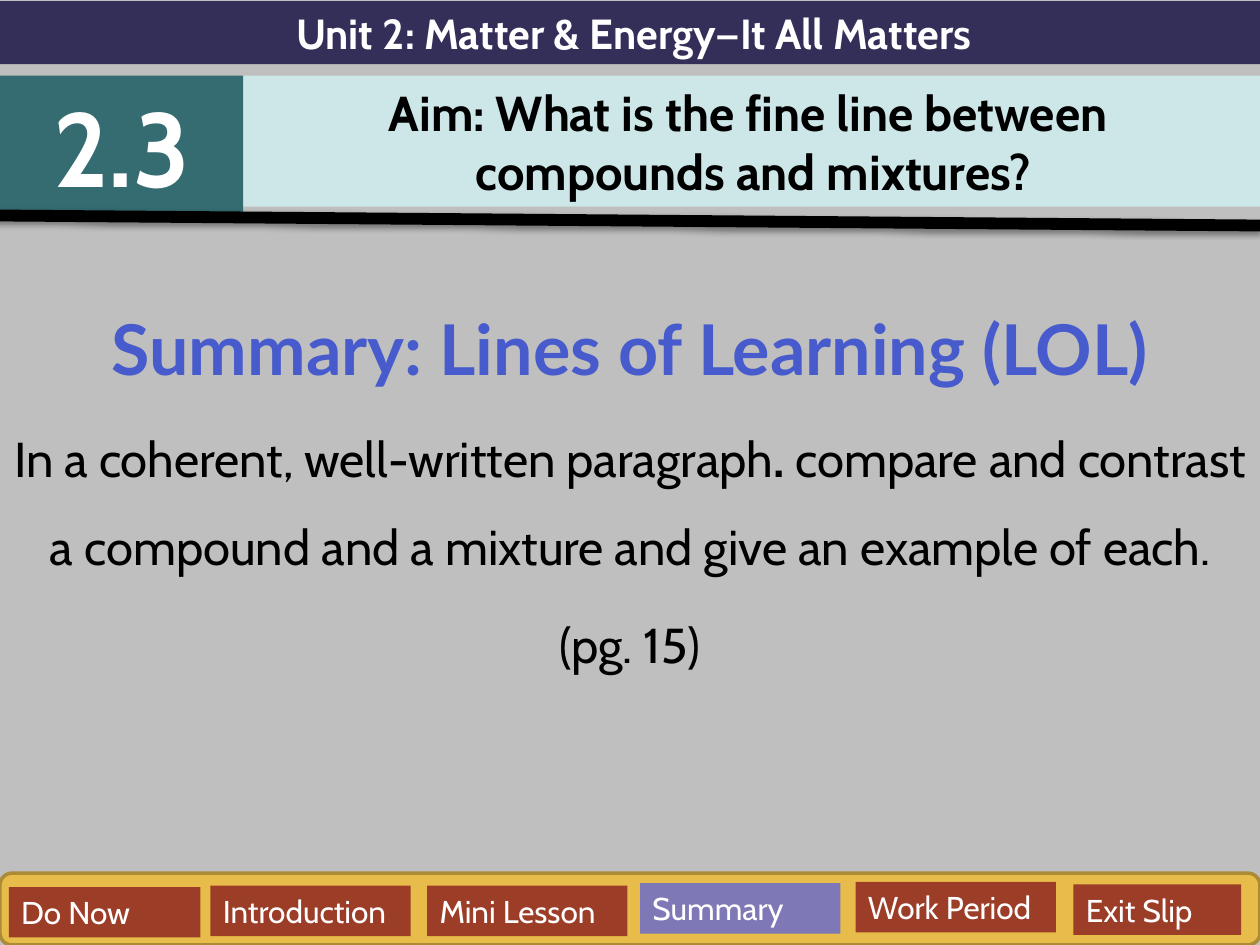
"""Builds the summary slide of lesson 2.3 on a grid of 100 columns by 75 rows."""
import pptx
import pptx.util
import pptx.dml.color
import pptx.enum.shapes
import pptx.enum.text
import pptx.oxml
import pptx.oxml.ns

Pt = pptx.util.Pt
Kind = pptx.enum.shapes.MSO_SHAPE
Side = pptx.enum.text.PP_ALIGN
HUES = {
    "back": "BFBFBF", "unit": "342F59", "lesson": "346C71", "aim": "CDE6E8",
    "head": "475BCD", "bar": "E8BC4A", "edge": "AC8B37", "tab": "9C3D28",
    "here": "7E78B7", "dark": "000000", "light": "FFFFFF",
}
TABS = [
    ("Do Now", 0.7, 70.4, 15.2), ("Introduction", 16.7, 70.3, 15.9),
    ("Mini Lesson", 33.9, 70.3, 15.9), ("Summary", 50.8, 70.1, 15.9),
    ("Work Period", 67.9, 70, 15.9), ("Exit Slip", 85.2, 70.2, 13.3),
]


class Deck:
    def __init__(self):
        self.prs = pptx.Presentation()
        self.prs.slide_width = pptx.util.Inches(10)
        self.prs.slide_height = pptx.util.Inches(7.5)
        self.unit = self.prs.slide_width // 100
        self.slide = self.prs.slides.add_slide(self.prs.slide_layouts[5])
        self.paint(self.slide.background.fill, "back")

    def grid(self, *cells):
        return [round(cell * self.unit) for cell in cells]

    def paint(self, fill, hue):
        fill.solid()
        fill.fore_color.rgb = pptx.dml.color.RGBColor.from_string(HUES[hue])

    def style(self, para, size, hue, bold=False, align=Side.CENTER, face="Cabin"):
        para.alignment = align
        font = para.font
        font.name, font.size, font.bold = face, Pt(size), bold
        self.paint(font.fill, hue)

    def label(self, shape, lines, *look, **more):
        frame = shape.text_frame
        frame.word_wrap = True
        frame.auto_size = pptx.enum.text.MSO_AUTO_SIZE.NONE
        frame.vertical_anchor = pptx.enum.text.MSO_ANCHOR.MIDDLE
        frame.text = "\n".join(lines)
        for para in frame.paragraphs:
            self.style(para, *look, **more)

    def title(self, box, fill, lines, *look):
        shape = self.slide.shapes.title
        shape.left, shape.top, shape.width, shape.height = self.grid(*box)
        self.paint(shape.fill, fill)
        self.label(shape, lines, *look)

    def block(self, box, fill, kind=Kind.RECTANGLE, edge=None):
        shape = self.slide.shapes.add_shape(kind, *self.grid(*box))
        shape.shadow.inherit = False
        self.paint(shape.fill, fill)
        if edge:
            self.paint(shape.line.fill, edge)
            shape.line.width = Pt(2)
        else:
            shape.line.fill.background()
        return shape

    def body(self, box, head, parts):
        frame = self.slide.shapes.add_textbox(*self.grid(*box)).text_frame
        frame.word_wrap = True
        para = frame.paragraphs[0]
        para.text = head
        self.style(para, 40, "head", True, face="Lato")
        for runs in parts:
            para = frame.add_paragraph()
            self.style(para, 28, "dark")
            for text, bold in runs:
                run = para.add_run()
                run.text, run.font.bold = text, bold
        for para in frame.paragraphs:
            para.line_spacing = 1.5
            para.space_before = Pt(para.font.size.pt * 0.2)

    def rule(self, ends, hue, width):
        line = self.slide.shapes.add_connector(
            pptx.enum.shapes.MSO_CONNECTOR.STRAIGHT, *self.grid(*ends))
        self.paint(line.line.fill, hue)
        line.line.width = Pt(width)
        line._element.spPr.append(pptx.oxml.parse_xml(
            f'<a:effectLst {pptx.oxml.ns.nsdecls("a")}>'
            f'<a:outerShdw blurRad="{Pt(3.1)}" dist="{Pt(1.6)}" dir="5400000" rotWithShape="0">'
            f'<a:srgbClr val="{HUES[hue]}"><a:alpha val="38000"/></a:srgbClr>'
            '</a:outerShdw></a:effectLst>'))


def main():
    deck = Deck()
    deck.title((19.3, 6, 81, 10.4), "aim",
               ["Aim: What is the fine line between ", "compounds and mixtures?"],
               28, "dark", True)
    deck.body((0, 20.4, 100, 49.8), "Summary: Lines of Learning (LOL)", [
        [("In a coherent, well-written paragraph", False), (". ", True),
         ("compare and contrast a compound and a mixture and give an example of each.", False)],
        [("(pg. 15)", False)],
    ])
    unit = deck.block((0, 0.1, 100.6, 5), "unit")
    deck.label(unit, ["Unit 2: Matter & Energy—It All Matters"], 24, "light", True)
    lesson = deck.block((0, 6, 19.3, 11.1), "lesson")
    deck.label(lesson, ["2.3"], 60, "light", True)
    deck.rule((-0.5, 17.1, 100, 17.9), "dark", 6.75)
    deck.block((0, 69.3, 100, 5.7), "bar", Kind.ROUNDED_RECTANGLE, "edge")
    for name, left, top, width in TABS:
        tab = deck.block((left, top, width, 4), "here" if name == "Summary" else "tab")
        deck.label(tab, [name], 18, "light", align=Side.LEFT)
    deck.prs.save("out.pptx")


if __name__ == "__main__":
    main()
